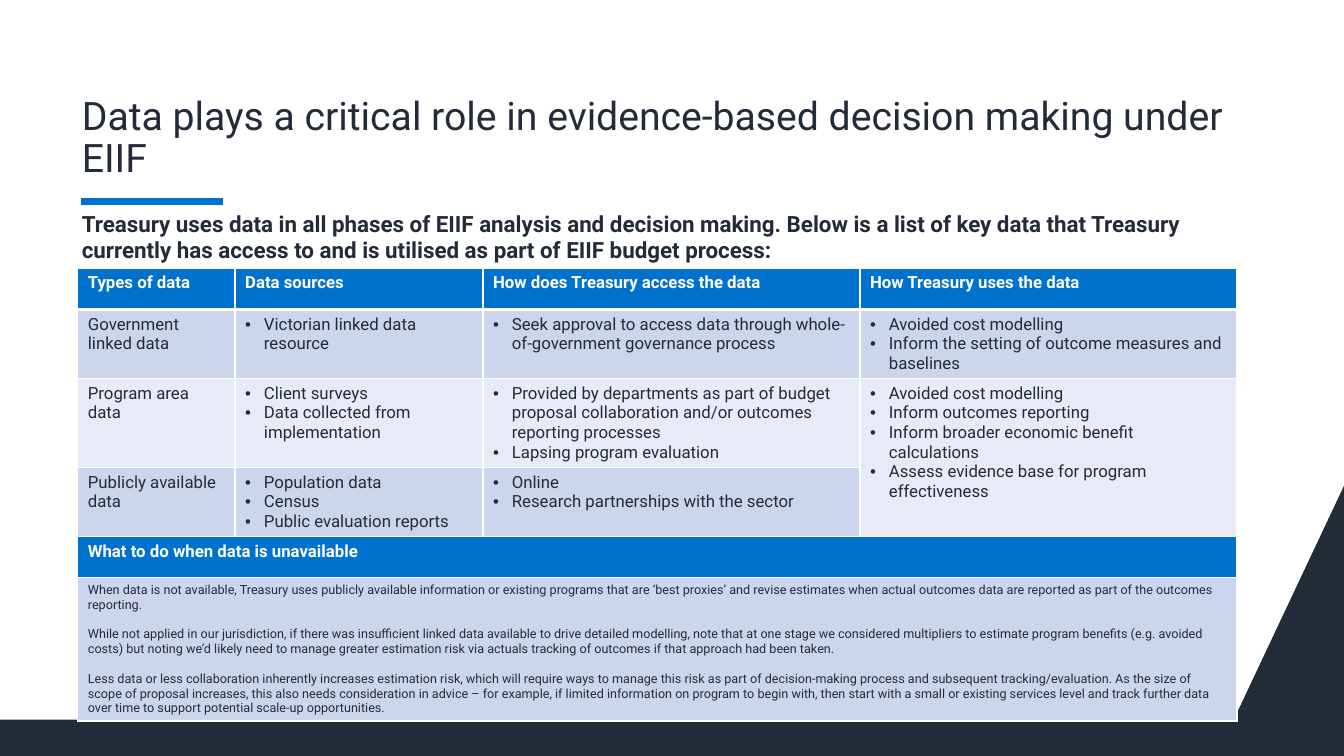
"""Build the slide on the data behind evidence-based decision making."""
from dataclasses import dataclass

from lxml.etree import SubElement
from pptx import Presentation
from pptx.dml.color import RGBColor
from pptx.enum.shapes import MSO_CONNECTOR as Connector
from pptx.enum.text import MSO_ANCHOR as Anchor, MSO_AUTO_SIZE as AutoSize, PP_ALIGN as Align
from pptx.oxml.ns import qn
from pptx.slide import Slide
from pptx.table import Table, _Cell as Cell
from pptx.text.text import TextFrame, _Paragraph as Paragraph
from pptx.util import Pt

FONT = "Roboto"
NAVY, BLUE, WHITE = "232B39", "0072CE", "FFFFFF"
BAND_DARK, BAND_LIGHT = "CCD5ED", "E7EBF6"
LEFT, WIDTH = 55.6, 828
COLUMN_WIDTHS = (112.3, 177.1, 269.3, 269.3)
BULLET_INDENT = 13.5
THIN, THICK = 1, 3


@dataclass
class Row:
    height: float
    fill: str
    cells: list[list[str]]
    color: str = NAVY
    size: float = 12
    bold: bool = False
    bulleted: bool = False
    gap: float = 0
    top: float = THIN
    bottom: float = THIN


ROWS = [
    Row(29.5, BLUE, [["Types of data"], ["Data sources"],
                     ["How does Treasury access the data"], ["How Treasury uses the data"]],
        color=WHITE, bold=True, bottom=THICK),
    Row(48.5, BAND_DARK, [
        ["Government linked data"],
        ["Victorian linked data resource"],
        ["Seek approval to access data through whole-of-government governance process"],
        ["Avoided cost modelling", "Inform the setting of outcome measures and baselines"],
    ], bulleted=True, top=THICK),
    Row(63.5, BAND_LIGHT, [
        ["Program area data"],
        ["Client surveys", "Data collected from implementation"],
        ["Provided by departments as part of budget proposal collaboration and/or outcomes "
         "reporting processes", "Lapsing program evaluation"],
        ["Avoided cost modelling", "Inform outcomes reporting",
         "Inform broader economic benefit calculations",
         "Assess evidence base for program effectiveness"],
    ], bulleted=True),
    Row(49, BAND_DARK, [
        ["Publicly available data"],
        ["Population data", "Census", "Public evaluation reports"],
        ["Online", "Research partnerships with the sector"],
    ], bulleted=True),
    Row(29.5, BLUE, [["What to do when data is unavailable"]], color=WHITE, bold=True),
    Row(102, BAND_DARK, [[
        "When data is not available, Treasury uses publicly available information or existing "
        "programs that are ‘best proxies’ and revise estimates when actual outcomes data are "
        "reported as part of the outcomes reporting.",
        "While not applied in our jurisdiction, if there was insufficient linked data available "
        "to drive detailed modelling, note that at one stage we considered multipliers to "
        "estimate program benefits (e.g. avoided costs) but noting we’d likely need to manage "
        "greater estimation risk via actuals tracking of outcomes if that approach had been taken.",
        "Less data or less collaboration inherently increases estimation risk, which will require "
        "ways to manage this risk as part of decision-making process and subsequent "
        "tracking/evaluation. As the size of scope of proposal increases, this also needs "
        "consideration in advice – for example, if limited information on program to begin with, "
        "then start with a small or existing services level and track further data over time to "
        "support potential scale-up opportunities.",
    ]], size=9, gap=10.5),
]


def rgb(value: str) -> RGBColor:
    return RGBColor.from_string(value)


def format_runs(text_frame: TextFrame, size: float, color: str, bold: bool = False) -> None:
    for paragraph in text_frame.paragraphs:
        for run in paragraph.runs:
            run.font.name = FONT
            run.font.size = Pt(size)
            run.font.bold = bold
            run.font.color.rgb = rgb(color)


def set_frame(text_frame: TextFrame, anchor: Anchor) -> None:
    text_frame.word_wrap = True
    text_frame.auto_size = AutoSize.NONE
    text_frame.vertical_anchor = anchor
    text_frame.margin_left = text_frame.margin_right = Pt(2.9)
    text_frame.margin_top = text_frame.margin_bottom = Pt(3.6)


def add_bullet(paragraph: Paragraph) -> None:
    properties = paragraph._p.get_or_add_pPr()
    properties.set("marL", str(Pt(BULLET_INDENT)))
    properties.set("indent", str(-Pt(BULLET_INDENT)))
    SubElement(properties, qn("a:buFont"), typeface="Arial")
    SubElement(properties, qn("a:buChar"), char="•")


def set_borders(cell: Cell, top: float, bottom: float) -> None:
    properties = cell._tc.get_or_add_tcPr()
    for side, width in (("L", THIN), ("R", THIN), ("T", top), ("B", bottom)):
        line = SubElement(properties, qn(f"a:ln{side}"), w=str(Pt(width)))
        fill = SubElement(line, qn("a:solidFill"))
        SubElement(fill, qn("a:srgbClr"), val=WHITE)


def fill_row(table: Table, index: int, row: Row) -> None:
    table.rows[index].height = Pt(row.height)
    for cell in table.rows[index].cells:
        set_borders(cell, row.top, row.bottom)
        cell.fill.solid()
        cell.fill.fore_color.rgb = rgb(row.fill)
    for column, lines in enumerate(row.cells):
        text_frame = table.cell(index, column).text_frame
        text_frame.text = "\n".join(lines)
        for paragraph in text_frame.paragraphs:
            if row.bulleted and column > 0:
                add_bullet(paragraph)
        for paragraph in text_frame.paragraphs[1:]:
            paragraph.space_before = Pt(row.gap)
        format_runs(text_frame, row.size, row.color, row.bold)


def add_data_table(slide: Slide) -> None:
    height = sum(row.height for row in ROWS)
    table = slide.shapes.add_table(len(ROWS), len(COLUMN_WIDTHS), Pt(LEFT), Pt(191.5),
                                   Pt(WIDTH), Pt(height)).table
    for column, width in zip(table.columns, COLUMN_WIDTHS):
        column.width = Pt(width)
    for index, row in enumerate(ROWS):
        fill_row(table, index, row)
    last_column = len(COLUMN_WIDTHS) - 1
    table.cell(2, last_column).merge(table.cell(3, last_column))
    for index in (4, 5):
        table.cell(index, 0).merge(table.cell(index, last_column))


def add_footer(slide: Slide) -> None:
    corners = [(0, 514), (0, 540), (960, 540), (960, 347)]
    builder = slide.shapes.build_freeform(Pt(881.3), Pt(514))
    builder.add_line_segments([(Pt(x), Pt(y)) for x, y in corners], close=True)
    footer = builder.convert_to_shape()
    footer.shadow.inherit = False
    footer.fill.solid()
    footer.fill.fore_color.rgb = rgb(NAVY)
    footer.line.fill.background()


def add_title(slide: Slide) -> None:
    title = slide.shapes.title
    title.left, title.top, title.width, title.height = Pt(LEFT), Pt(52), Pt(WIDTH), Pt(81)
    text_frame = title.text_frame
    text_frame.text = "Data plays a critical role in evidence-based decision making under EIIF"
    set_frame(text_frame, Anchor.BOTTOM)
    text_frame.paragraphs[0].alignment = Align.LEFT
    text_frame.paragraphs[0].line_spacing = 0.9
    format_runs(text_frame, 28, NAVY)


def add_accent(slide: Slide) -> None:
    accent = slide.shapes.add_connector(Connector.STRAIGHT, Pt(57.6), Pt(144), Pt(159.1), Pt(144))
    accent.line.color.rgb = rgb(BLUE)
    accent.line.width = Pt(4.5)
    SubElement(accent._element.spPr, qn("a:effectLst"))


def add_introduction(slide: Slide) -> None:
    text_frame = slide.shapes.add_textbox(Pt(LEFT), Pt(146.2), Pt(WIDTH), Pt(46)).text_frame
    text_frame.text = ("Treasury uses data in all phases of EIIF analysis and decision making. "
                       "Below is a list of key data that Treasury currently has access to and is "
                       "utilised as part of EIIF budget process:")
    set_frame(text_frame, Anchor.TOP)
    format_runs(text_frame, 16, NAVY, bold=True)


def main() -> None:
    presentation = Presentation()
    presentation.slide_width, presentation.slide_height = Pt(960), Pt(540)
    slide = presentation.slides.add_slide(presentation.slide_layouts[5])
    add_footer(slide)
    add_accent(slide)
    add_title(slide)
    add_data_table(slide)
    add_introduction(slide)
    presentation.save("out.pptx")


if __name__ == "__main__":
    main()
